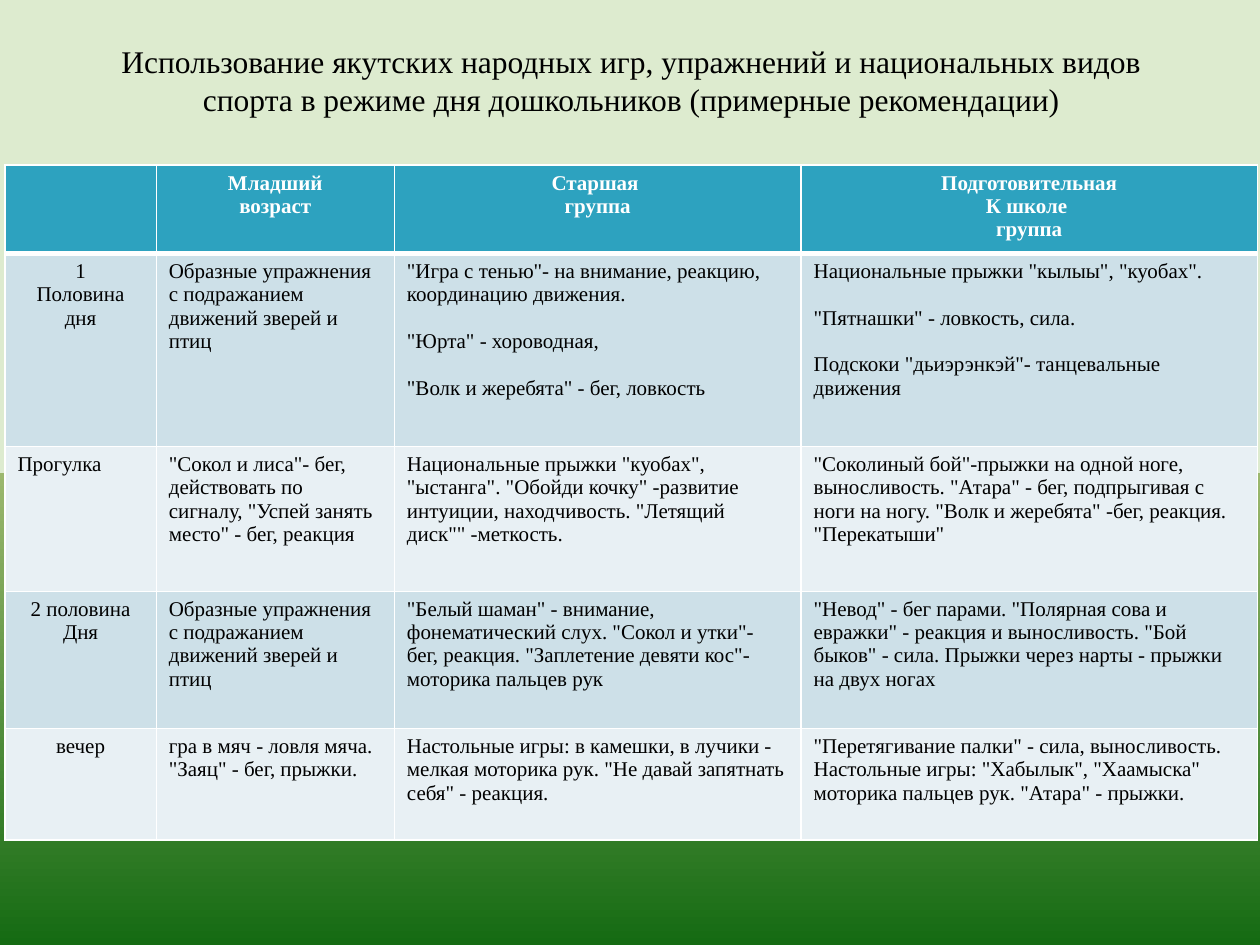
from lxml.etree import SubElement
from pptx import Presentation
from pptx.dml.color import RGBColor
from pptx.enum.text import MSO_ANCHOR, PP_ALIGN
from pptx.oxml.ns import qn
from pptx.util import Cm, Pt

TITLE = ("Использование якутских народных игр, упражнений и национальных видов "
         "спорта в режиме дня дошкольников (примерные рекомендации)")
IMITATION = ["Образные упражнения с подражанием движений зверей и птиц"]
ROWS = [
    [[], ["Младший", "возраст"], ["Старшая ", "группа"],
     ["Подготовительная", "К школе ", "группа"]],
    [["1", "Половина", "дня"],
     IMITATION,
     ['"Игра с тенью"- на внимание, реакцию, координацию движения.',
      '"Юрта" - хороводная,',
      '"Волк и жеребята" - бег, ловкость'],
     ['Национальные прыжки "кылыы", "куобах".',
      '"Пятнашки" - ловкость, сила.',
      'Подскоки "дьиэрэнкэй"- танцевальные движения']],
    [["Прогулка"],
     ['"Сокол и лиса"- бег, действовать по сигналу, "Успей занять место" - бег, реакция'],
     ['Национальные прыжки "куобах", "ыстанга". "Обойди кочку" -развитие '
      'интуиции, находчивость. "Летящий диск"" -меткость.'],
     ['"Соколиный бой"-прыжки на одной ноге, выносливость. "Атара" - бег, подпрыгивая '
      'с ноги на ногу. "Волк и жеребята" -бег, реакция. "Перекатыши"']],
    [["2 половина", "Дня"],
     IMITATION,
     ['"Белый шаман" - внимание, фонематический слух. "Сокол и утки"- бег, реакция. '
      '"Заплетение девяти кос"- моторика пальцев рук'],
     ['"Невод" - бег парами. "Полярная сова и евражки" - реакция и выносливость. '
      '"Бой быков" - сила. Прыжки через нарты - прыжки на двух ногах']],
    [["вечер"],
     ['гра в мяч - ловля мяча. "Заяц" - бег, прыжки.'],
     ['Настольные игры: в камешки, в лучики - мелкая моторика рук. '
      '"Не давай запятнать себя" - реакция.'],
     ['"Перетягивание палки" - сила, выносливость. Настольные игры: "Хабылык", '
      '"Хаамыска" моторика пальцев рук. "Атара" - прыжки.']],
]
COL_WIDTHS = [3.05, 4.8, 8.2, 9.2]
ROW_HEIGHTS = [1.65, 3.89, 2.92, 2.77, 2.24]
THEME = {
    "font": "Times New Roman", "title": 18, "body": 12, "gap": 13.4,
    "text": "000000", "head_text": "FFFFFF", "border": "FFFFFF",
    "head": "2DA2BF", "bands": ["E8F0F4", "CDE0E8"],
    "sky": [(0, "DDEBCF"), (50, "DDEBCF"), (50, "9CB86E"), (100, "156B13")],
}


def write(tf, lines, size=THEME["body"], color=THEME["text"], bold=False,
          align=PP_ALIGN.LEFT, gap=0):
    for i, line in enumerate(lines):
        p = tf.paragraphs[0] if i == 0 else tf.add_paragraph()
        p.alignment = align
        if i and gap:
            p.space_before = Pt(gap)
        r = p.add_run()
        r.text = line
        r.font.name, r.font.size, r.font.bold = THEME["font"], Pt(size), bold
        r.font.color.rgb = RGBColor.from_string(color)


def add_color(parent, color):
    SubElement(parent, qn("a:srgbClr"), val=color)


def set_borders(cell, **widths):
    tcPr = cell._tc.get_or_add_tcPr()
    for side in "LRTB":
        ln = SubElement(tcPr, qn(f"a:ln{side}"), w=str(Pt(widths.get(side, 1))))
        add_color(SubElement(ln, qn("a:solidFill")), THEME["border"])


def set_background(s):
    fill = s.background.fill
    fill.gradient()
    fill.gradient_angle = 270
    stops = s.background._cSld.find(".//" + qn("a:gsLst"))
    for stop in list(stops):
        stops.remove(stop)
    for pos, color in THEME["sky"]:
        add_color(SubElement(stops, qn("a:gs"), pos=str(pos * 1000)), color)


def add_title(s):
    tf = s.shapes.add_textbox(Cm(1.3), Cm(0.33), Cm(22.86), Cm(2.57)).text_frame
    tf.word_wrap = True
    tf.vertical_anchor = MSO_ANCHOR.MIDDLE
    write(tf, [TITLE], size=THEME["title"], align=PP_ALIGN.CENTER)


def add_schedule(s):
    tbl = s.shapes.add_table(len(ROWS), len(COL_WIDTHS), Cm(0.1), Cm(3.33),
                             Cm(sum(COL_WIDTHS)), Cm(sum(ROW_HEIGHTS))).table
    for col, width in zip(tbl.columns, COL_WIDTHS):
        col.width = Cm(width)
    for i, (row, height) in enumerate(zip(ROWS, ROW_HEIGHTS)):
        tbl.rows[i].height = Cm(height)
        head = i == 0
        for j, lines in enumerate(row):
            cell = tbl.cell(i, j)
            set_borders(cell, T=3 if i == 1 else 1, B=3 if head else 1)
            cell.fill.solid()
            cell.fill.fore_color.rgb = RGBColor.from_string(
                THEME["head"] if head else THEME["bands"][i % 2])
            centred = head or (j == 0 and lines != ["Прогулка"])
            write(cell.text_frame, lines, bold=head,
                  color=THEME["head_text" if head else "text"],
                  align=PP_ALIGN.CENTER if centred else PP_ALIGN.LEFT,
                  gap=0 if centred else THEME["gap"])


def main():
    """Build the slide with the daily schedule of folk games."""
    prs = Presentation()
    prs.slide_width, prs.slide_height = Cm(25.4), Cm(19.05)
    s = prs.slides.add_slide(prs.slide_layouts[6])
    set_background(s)
    add_title(s)
    add_schedule(s)
    prs.save("out.pptx")


if __name__ == "__main__":
    main()
